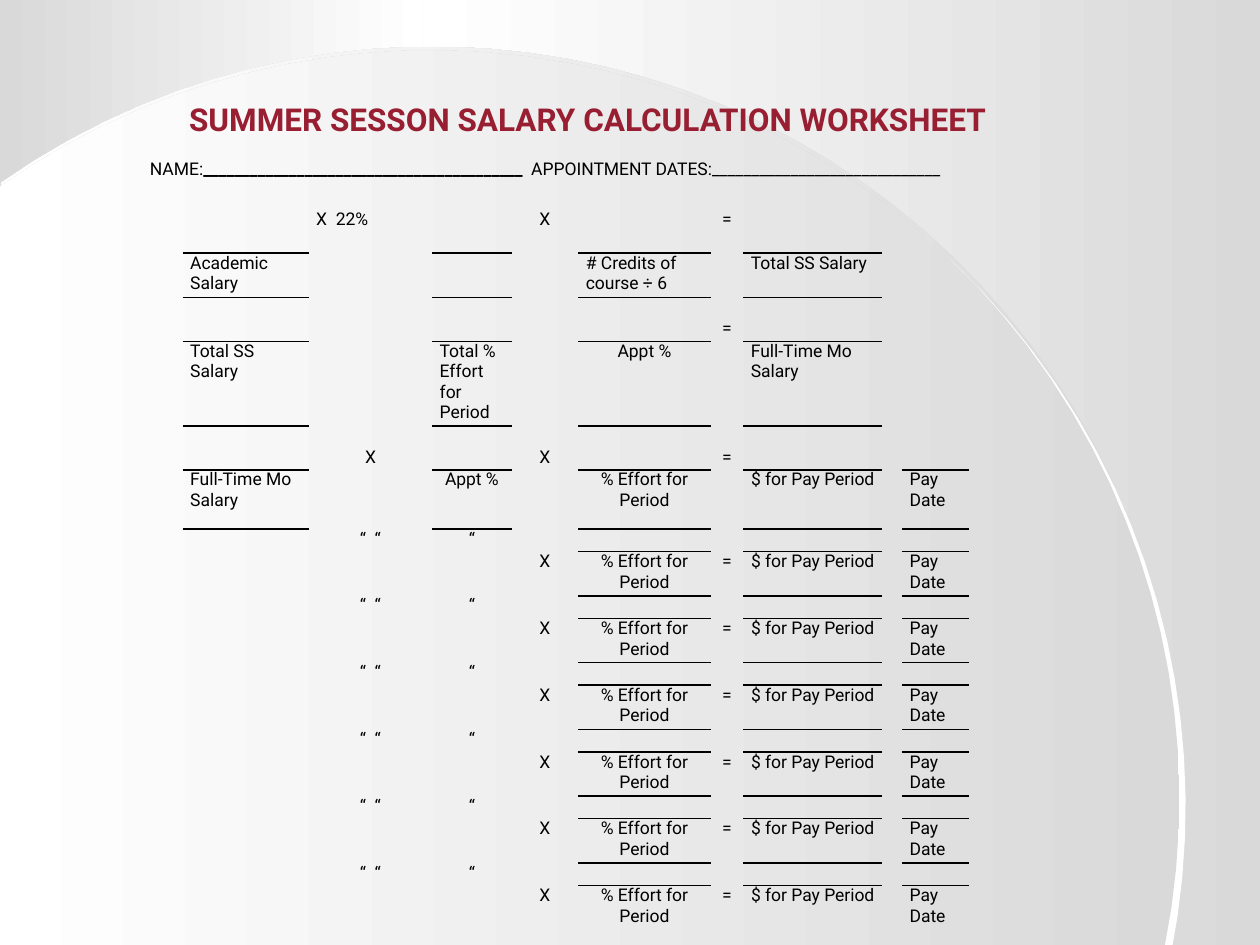
import math
from dataclasses import dataclass

from lxml import etree
from pptx import Presentation
from pptx import util as u
from pptx.dml.color import RGBColor
from pptx.enum import shapes, text
from pptx.oxml import ns

Inches, Pt = u.Inches, u.Pt


@dataclass(frozen=True)
class Theme:
    font: str = "Roboto"
    grey: str = "D9D9D9"
    white: str = "FFFFFF"
    black: str = "000000"
    crimson: str = "981E32"
    title: int = 18
    body: int = 10


theme = Theme()


def paint(sp, start, end, angle=0):
    sp.shadow.inherit = False
    sp.line.fill.background()
    sp.fill.gradient()
    sp.fill.gradient_angle = angle
    for stop, color in zip(sp.fill.gradient_stops, (start, end)):
        stop.color.rgb = RGBColor.from_string(color)


def style(r, size, color, bold=False):
    r.font.name = theme.font
    r.font.size = Pt(size)
    r.font.bold = bold
    r.font.color.rgb = RGBColor.from_string(color)


prs = Presentation()
prs.slide_width, prs.slide_height = Inches(10), Inches(7.5)
s = prs.slides.add_slide(prs.slide_layouts[5])

for left, width, angle in ((0, 3.38, 0), (3.36, 6.64, 180)):
    sp = s.shapes.add_shape(shapes.MSO_SHAPE.RECTANGLE, Inches(left), 0, Inches(width), Inches(7.5))
    paint(sp, theme.grey, theme.white, angle)

domes = [
    (3.43, 6.32, 5.95, 0.01, 7.5, theme.grey),
    (3.43, 6.40, 5.98, -0.01, 7.59, theme.white),
    (3.42, 6.34, 5.94, -0.01, 7.52, theme.grey),
]
steps = 45
for cx, cy, radius, left, bottom, color in domes:
    first = math.asin((bottom - cy) / radius)
    last = -math.pi + math.acos((cx - left) / radius)
    angles = [first + (last - first) * i / steps for i in range(steps + 1)]
    points = [(Inches(cx + radius * math.cos(a)), Inches(cy + radius * math.sin(a))) for a in angles]
    fb = s.shapes.build_freeform(Inches(left), Inches(bottom), scale=1.0)
    fb.add_line_segments(points, close=True)
    paint(fb.convert_to_shape(), color, theme.white, 180)

PERIODS = 6
widths = [1, 0.98, 0.63, 0.53, 1.05, 0.26, 1.1, 0.16, 0.53]
heights = [0.35, 0.35, 0.17, 0.18, 0.67, 0.17, 0.18, 0.47] + [0.18, 0.35] * PERIODS
labels = {
    (0, 1): "X  22%", (0, 3): "X", (0, 5): "=",
    (1, 0): "Academic Salary", (1, 4): "# Credits of course ÷ 6", (1, 6): "Total SS Salary",
    (3, 5): "=",
    (4, 0): "Total SS Salary", (4, 2): "Total % Effort for Period",
    (4, 4): "Appt %", (4, 6): "Full-Time Mo Salary",
    (6, 1): "X", (6, 3): "X", (6, 5): "=",
    (7, 0): "Full-Time Mo Salary", (7, 2): "Appt %",
}
ruled = {1: (0, 2, 4, 6), 4: (0, 2, 4, 6), 7: (0, 2, 4, 6, 8)}
for row in range(9, len(heights), 2):
    labels.update({(row - 1, 1): "“  “", (row - 1, 2): "“", (row, 3): "X", (row, 5): "="})
    ruled[row] = (4, 6, 8)
for row in range(7, len(heights), 2):
    labels.update({(row, 4): "% Effort for Period", (row, 6): "$ for Pay Period", (row, 8): "Pay Date"})
left_labels = {"X  22%", "Academic Salary", "# Credits of course ÷ 6", "Total SS Salary",
               "Total % Effort for Period", "Full-Time Mo Salary", "Pay Date"}

table = s.shapes.add_table(len(heights), len(widths), Inches(1.45), Inches(1.66),
                           Inches(sum(widths)), Inches(sum(heights))).table
table.first_row = table.horz_banding = False
style_id = table._tbl.find(".//" + ns.qn("a:tableStyleId"))
style_id.text = "{2D5ABB26-0587-4C30-8999-92F81FD0307C}"
for col, width in zip(table.columns, widths):
    col.width = Inches(width)
for row, height in zip(table.rows, heights):
    row.height = Inches(height)

for row in range(len(heights)):
    for col in range(len(widths)):
        cell = table.cell(row, col)
        cell.fill.background()
        cell.margin_left = cell.margin_right = Inches(0.06)
        cell.margin_top = cell.margin_bottom = 0
        p = cell.text_frame.paragraphs[0]
        label = labels.get((row, col))
        if label:
            p.text = label
            p.alignment = text.PP_ALIGN.LEFT if label in left_labels else text.PP_ALIGN.CENTER
            style(p.runs[0], theme.body, theme.black)
        else:
            end = etree.SubElement(p._p, ns.qn("a:endParaRPr"), sz=str(theme.body * 100))
            etree.SubElement(end, ns.qn("a:latin"), typeface=theme.font)
        for side, border_row in (("a:lnT", row), ("a:lnB", row + 1)):
            if col in ruled.get(border_row, ()):
                ln = etree.Element(ns.qn(side), w=str(Pt(1)))
                fill = etree.SubElement(ln, ns.qn("a:solidFill"))
                etree.SubElement(fill, ns.qn("a:srgbClr"), val=theme.black)
                cell._tc.get_or_add_tcPr().insert(0, ln)

title = s.shapes.title
s.shapes.element.append(title.element)
title.left, title.top, title.width, title.height = Inches(1.09), Inches(0.72), Inches(7.15), Inches(0.91)
tf = title.text_frame
tf.word_wrap = True
tf.auto_size = text.MSO_AUTO_SIZE.NONE
tf.vertical_anchor = text.MSO_ANCHOR.TOP
tf.margin_top = Inches(0.07)
tf.text = "SUMMER SESSON SALARY CALCULATION WORKSHEET"
p = tf.paragraphs[0]
p.alignment = text.PP_ALIGN.CENTER
style(p.runs[0], theme.title, theme.crimson, True)

p = tf.add_paragraph()
p.alignment = text.PP_ALIGN.LEFT
p.space_before = Pt(12)
for words, bold in (("NAME:", False), ("_" * 41 + "  ", True),
                    ("APPOINTMENT DATES:" + "_" * 29, False)):
    r = p.add_run()
    r.text = words
    style(r, theme.body, theme.black, bold)

prs.save("out.pptx")
